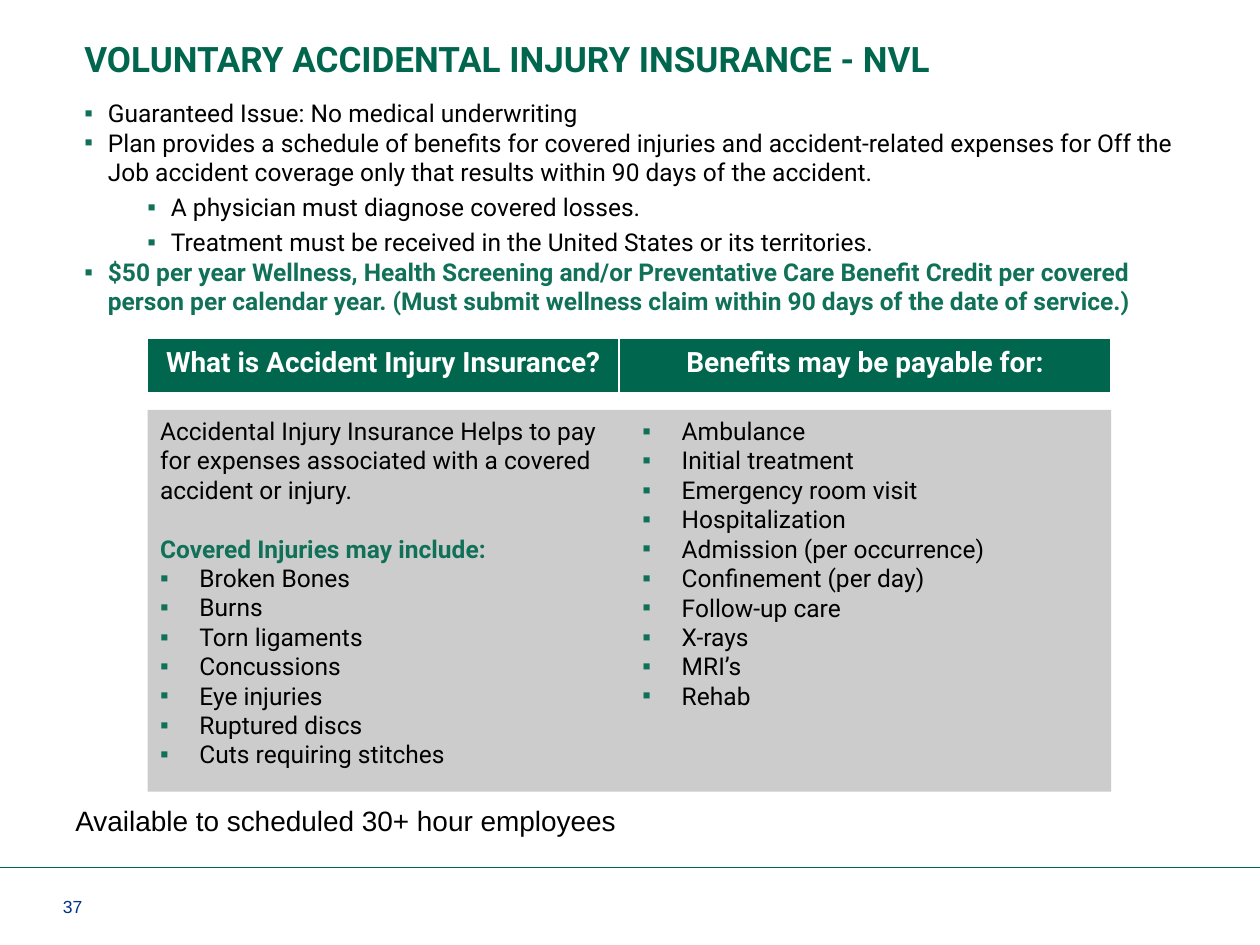
from lxml import etree
from pptx import Presentation
from pptx.dml.color import RGBColor
from pptx.enum.shapes import MSO_CONNECTOR, MSO_SHAPE
from pptx.enum.text import MSO_ANCHOR, PP_ALIGN
from pptx.oxml.ns import qn
from pptx.util import Pt

RECTANGLE = MSO_SHAPE.RECTANGLE
STRAIGHT = MSO_CONNECTOR.STRAIGHT
TOP, BOTTOM = MSO_ANCHOR.TOP, MSO_ANCHOR.BOTTOM
CENTER = PP_ALIGN.CENTER

COLORS = {
    "green": "00664D",
    "accent": "117158",
    "panel": "CCCCCC",
    "number": "003087",
    "black": "000000",
    "white": "FFFFFF",
}

TITLE = "VOLUNTARY ACCIDENTAL INJURY INSURANCE - NVL"
FEATURES = [
    ("top", "Guaranteed Issue: No medical underwriting"),
    ("top", "Plan provides a schedule of benefits for covered injuries and "
            "accident-related expenses for Off the Job accident coverage only "
            "that results within 90 days of the accident."),
    ("sub", "A physician must diagnose covered losses."),
    ("sub", "Treatment must be received in the United States or its territories."),
    ("key", "$50 per year Wellness, Health Screening and/or Preventative Care "
            "Benefit Credit per covered person per calendar year. (Must submit "
            "wellness claim within 90 days of the date of service.)"),
]
HEADERS = ["What is Accident Injury Insurance?", "Benefits may be payable for:"]
INJURIES = [
    ("plain", "Accidental Injury Insurance Helps to pay for expenses associated "
              "with a covered accident or injury."),
    ("heading", "Covered Injuries may include:"),
    ("item", "Broken Bones"),
    ("item", "Burns"),
    ("item", "Torn ligaments"),
    ("item", "Concussions"),
    ("item", "Eye injuries"),
    ("item", "Ruptured discs"),
    ("item", "Cuts requiring stitches"),
]
BENEFITS = [("item", name) for name in (
    "Ambulance", "Initial treatment", "Emergency room visit", "Hospitalization",
    "Admission (per occurrence)", "Confinement (per day)", "Follow-up care",
    "X-rays", "MRI’s", "Rehab",
)]
AVAILABILITY = "Available to scheduled 30+ hour employees"
PAGE_NUMBER = "37"

STYLES = {
    "plain": {},
    "title": {"size": 20, "color": "green", "bold": True},
    "top": {"margin": 13.5, "hang": 13.5},
    "sub": {"margin": 49.5, "hang": 13.5, "before": 3.3, "level": 1},
    "key": {"margin": 13.5, "hang": 13.5, "color": "accent", "bold": True},
    "heading": {"before": 16.75, "color": "accent", "bold": True},
    "item": {"margin": 22.5, "hang": 22.5},
    "header": {"size": 16, "color": "white", "bold": True},
    "note": {"size": 16, "font": "Arial"},
    "number": {"size": 10, "font": "Arial", "color": "number"},
}

PAGE_WIDTH, PAGE_HEIGHT = 720, 540
PANEL_LEFT, PANEL_TOP, PANEL_HEIGHT = 84.4, 234.2, 218.2
COLUMN_WIDTHS = [269.4, 281.2]
PANEL_WIDTH = sum(COLUMN_WIDTHS)
HEADER_TOP, HEADER_HEIGHT = 193.2, 32.2
RULE_TOP = 495.8


def color(name):
    return RGBColor.from_string(COLORS[name])


def add_bullet(para, margin, hang):
    props = para._p.get_or_add_pPr()
    props.set("marL", str(Pt(margin)))
    props.set("indent", str(-Pt(hang)))
    tint = etree.SubElement(props, qn("a:buClr"))
    etree.SubElement(tint, qn("a:srgbClr"), val=COLORS["accent"])
    etree.SubElement(props, qn("a:buFont"), typeface="Arial")
    etree.SubElement(props, qn("a:buChar"), char="▪")


def write_para(para, kind, text):
    style = STYLES[kind]
    para.text = text
    para.level = style.get("level", 0)
    if "hang" in style:
        add_bullet(para, style["margin"], style["hang"])
    para.space_before = Pt(style.get("before", 0))
    for span in para.runs:
        span.font.name = style.get("font", "Roboto")
        span.font.size = Pt(style.get("size", 14))
        span.font.bold = style.get("bold", False)
        span.font.color.rgb = color(style.get("color", "black"))


def add_text(page, left, top, width, height, paras,
             side_margins=(7.2, 7.2), anchor=TOP):
    box = page.shapes.add_textbox(Pt(left), Pt(top), Pt(width), Pt(height))
    frame = box.text_frame
    frame.word_wrap = True
    frame.vertical_anchor = anchor
    frame.margin_left, frame.margin_right = map(Pt, side_margins)
    for index, (kind, text) in enumerate(paras):
        para = frame.add_paragraph() if index else frame.paragraphs[0]
        write_para(para, kind, text)


def add_border(cell, side, width):
    line = etree.SubElement(cell._tc.get_or_add_tcPr(), qn("a:" + side), w=str(Pt(width)))
    fill = etree.SubElement(line, qn("a:solidFill"))
    etree.SubElement(fill, qn("a:srgbClr"), val=COLORS["white"])


def add_header(page):
    table = page.shapes.add_table(
        1, len(HEADERS), Pt(PANEL_LEFT), Pt(HEADER_TOP),
        Pt(PANEL_WIDTH), Pt(HEADER_HEIGHT)).table
    for index, (text, width) in enumerate(zip(HEADERS, COLUMN_WIDTHS)):
        table.columns[index].width = Pt(width)
        cell = table.cell(0, index)
        for side, weight in (("lnL", 1), ("lnR", 1), ("lnT", 1), ("lnB", 3)):
            add_border(cell, side, weight)
        cell.fill.solid()
        cell.fill.fore_color.rgb = color("green")
        para = cell.text_frame.paragraphs[0]
        write_para(para, "header", text)
        para.alignment = CENTER
        para.line_spacing = 1.07


def add_rule(page):
    rule = page.shapes.add_connector(
        STRAIGHT, Pt(0), Pt(RULE_TOP), Pt(PAGE_WIDTH), Pt(RULE_TOP))
    rule.line.color.rgb = color("green")
    rule.line.width = Pt(0.5)
    etree.SubElement(rule._element.spPr, qn("a:effectLst"))


def add_panel(page):
    panel = page.shapes.add_shape(
        RECTANGLE, Pt(PANEL_LEFT), Pt(PANEL_TOP), Pt(PANEL_WIDTH), Pt(PANEL_HEIGHT))
    panel.shadow.inherit = False
    panel.fill.solid()
    panel.fill.fore_color.rgb = color("panel")
    panel.line.fill.background()


def main():
    deck = Presentation()
    deck.slide_width, deck.slide_height = Pt(PAGE_WIDTH), Pt(PAGE_HEIGHT)
    page = deck.slides.add_slide(deck.slide_layouts[6])
    add_rule(page)
    add_text(page, 36, 509.8, 39, 18, [("number", PAGE_NUMBER)], (0, 0), BOTTOM)
    add_panel(page)
    add_text(page, 48.2, 18, 642, 34.6, [("title", TITLE)], (0, 0))
    add_text(page, 48.2, 52.6, 642, 131.8, FEATURES, (0, 7.2))
    add_header(page)
    add_text(page, PANEL_LEFT, PANEL_TOP, COLUMN_WIDTHS[0], 211, INJURIES)
    add_text(page, 360, PANEL_TOP, COLUMN_WIDTHS[0], 177, BENEFITS)
    add_text(page, 36, 455.8, 355, 26.6, [("note", AVAILABILITY)])
    deck.save("out.pptx")


if __name__ == "__main__":
    main()
